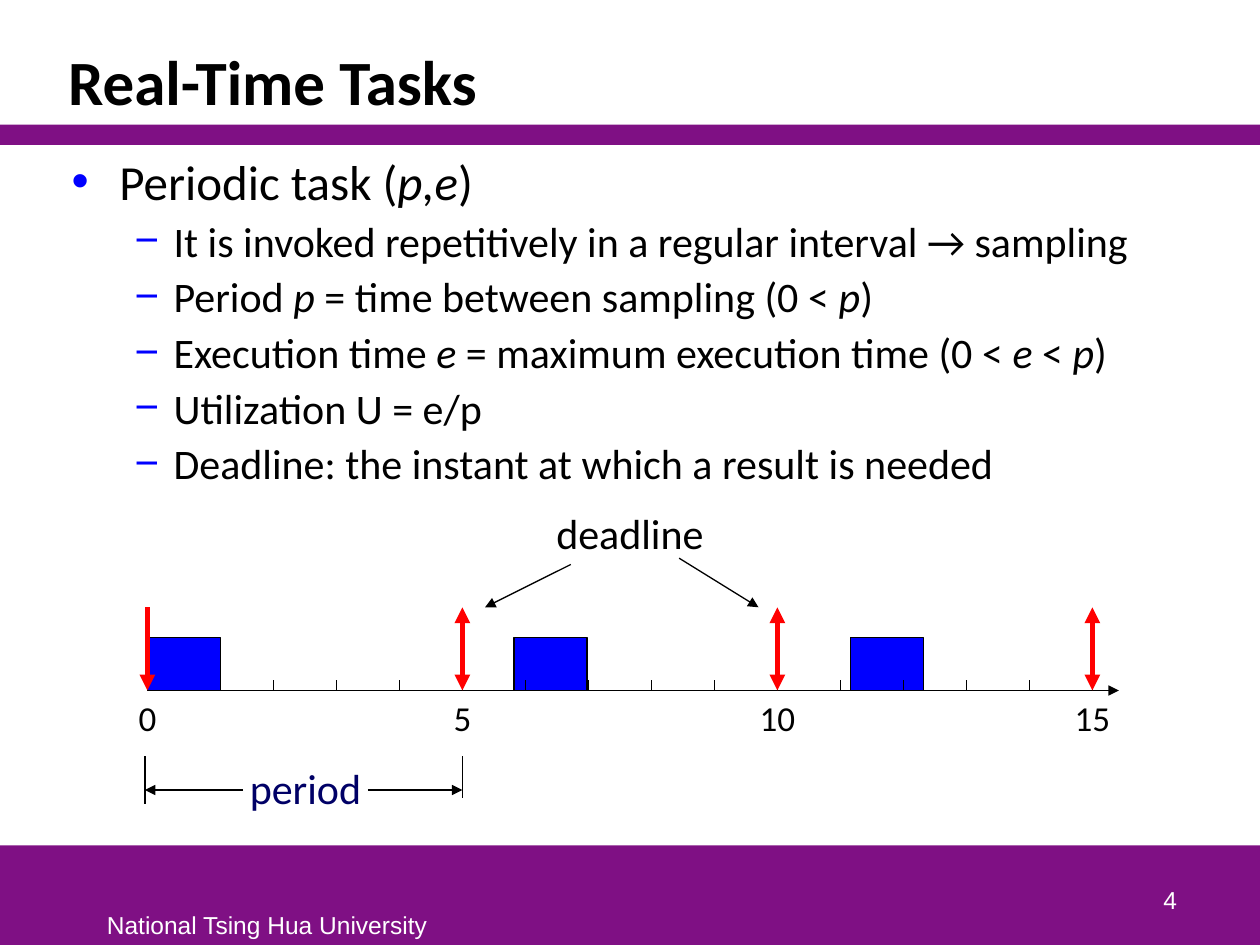
from pptx import Presentation, util as u
from pptx.dml.color import RGBColor
from pptx.enum import shapes, text
from pptx.oxml.ns import qn
from lxml import etree

# Content
TITLE = "Real-Time Tasks"
FOOTER = "National Tsing Hua University"
PAGE = "4"
# (level, runs); every second run is italic
BODY = [
    (0, ["Periodic task (", "p,e", ")"]),
    (1, ["It is invoked repetitively in a regular interval → sampling"]),
    (1, ["Period ", "p", " = time between sampling (0 < ", "p", ")"]),
    (1, ["Execution time ", "e", " = maximum execution time (0 < ", "e ", "< ", "p", ")"]),
    (1, ["Utilization U = e/p"]),
    (1, ["Deadline: the instant at which a result is needed"]),
]
LEVELS = [  # bullet, size, left margin, indent
    ("•", 28, 0.38, -0.38),
    ("−", 24, 0.81, -0.31),
]
COLORS = {"band": "7F1084", "white": "FFFFFF", "black": "000000",
          "blue": "0000FF", "red": "FF0000", "navy": "000066"}

# Timeline grid
X0, STEP, PERIOD, LAST = 1.17, 0.5, 5, 15
AXIS_Y, TICK, RELEASE_TOP = 5.48, 0.08, 4.82
JOB_W, JOB_H = 0.58, 0.42
LATER_JOBS = [4.08, 6.75]
DIM_TOP, DIM_Y = 6, 6.27

prs = Presentation()
prs.slide_width, prs.slide_height = u.Inches(10), u.Inches(7.5)
s = prs.slides.add_slide(prs.slide_layouts[5])


def rgb(name):
    return RGBColor.from_string(COLORS[name])


def add_run(p, words, size, color="black", font="Calibri", bold=False, italic=False):
    r = p.add_run()
    r.text = words
    f = r.font
    f.size, f.name, f.bold, f.italic = u.Pt(size), font, bold, italic
    f.color.rgb = rgb(color)


def box(x, y, w, h, wrap=True):
    tf = s.shapes.add_textbox(*map(u.Inches, (x, y, w, h))).text_frame
    tf.word_wrap = wrap
    return tf


def label(words, x, y, w, h, size, align=None, wrap=True, **style):
    tf = box(x, y, w, h, wrap)
    p = tf.paragraphs[0]
    p.alignment = align
    add_run(p, words, size, **style)
    return tf


def rect(x, y, w, h, fill, line=None):
    sp = s.shapes.add_shape(shapes.MSO_SHAPE.RECTANGLE, *map(u.Inches, (x, y, w, h)))
    sp.shadow.inherit = False
    sp.fill.solid()
    sp.fill.fore_color.rgb = rgb(fill)
    if line:
        sp.line.color.rgb = rgb(line)
        sp.line.width = u.Pt(1)
    else:
        sp.line.fill.background()


def line(x1, y1, x2, y2, color="black", width=0.75, arrows=()):
    c = s.shapes.add_connector(shapes.MSO_CONNECTOR.STRAIGHT,
                               *map(u.Inches, (x1, y1, x2, y2)))
    c.line.color.rgb = rgb(color)
    c.line.width = u.Pt(width)
    for end in arrows:
        etree.SubElement(c.line._get_or_add_ln(), qn("a:" + end), type="triangle")
    etree.SubElement(c._element.spPr, qn("a:effectLst"))


def bullet(p, char, left, indent):
    pPr = p._p.get_or_add_pPr()
    pPr.set("marL", str(u.Inches(left)))
    pPr.set("indent", str(u.Inches(indent)))
    clr = etree.SubElement(pPr, qn("a:buClr"))
    etree.SubElement(clr, qn("a:srgbClr"), val=COLORS["blue"])
    etree.SubElement(pPr, qn("a:buFont"), typeface="Arial")
    etree.SubElement(pPr, qn("a:buChar"), char=char)


def job(x):
    rect(x, AXIS_Y - JOB_H, JOB_W, JOB_H, "blue", "black")


def at(time):
    return X0 + time * STEP


# Bands, footer and page number
rect(0, 6.71, 10, 0.79, "band")
rect(0, 0.99, 10, 0.16, "band")
label(FOOTER, 0.75, 7.17, 2.76, 0.33, 14, wrap=False, color="white", font="Arial")
tf = label(PAGE, 7.36, 6.81, 2.08, 0.5, 14, text.PP_ALIGN.RIGHT,
           color="white", font="Arial")
tf.vertical_anchor = text.MSO_ANCHOR.BOTTOM

# Title
title = s.shapes.title
title.left, title.top, title.width, title.height = map(u.Inches, (0.44, 0.25, 8.97, 0.74))
tf = title.text_frame
tf.vertical_anchor = text.MSO_ANCHOR.BOTTOM
p = tf.paragraphs[0]
p.alignment, p.line_spacing = text.PP_ALIGN.LEFT, 0.85
add_run(p, TITLE, 36, bold=True)

# Bulleted text
tf = box(0.47, 1.15, 8.94, 5.51)
for i, (level, runs) in enumerate(BODY):
    p = tf.add_paragraph() if i else tf.paragraphs[0]
    char, size, left, indent = LEVELS[level]
    p.level = level
    if i:
        p.space_before = u.Pt(3)
    bullet(p, char, left, indent)
    for j, words in enumerate(runs):
        # the run "< " between two variables stays upright
        add_run(p, words, size, italic=j % 2 == 1)

# Timeline: jobs, axis and ticks
for x in LATER_JOBS:
    job(x)
line(X0, AXIS_Y, 8.71, AXIS_Y)
for time in range(LAST + 1):
    line(at(time), AXIS_Y - TICK, at(time), AXIS_Y)
job(X0)
line(8.62, AXIS_Y, 8.88, AXIS_Y, arrows=["tailEnd"])

# Releases and deadlines, with their times
for time in range(0, LAST + 1, PERIOD):
    ends = ["headEnd", "tailEnd"] if time else ["tailEnd"]
    line(at(time), RELEASE_TOP, at(time), AXIS_Y, "red", 3, ends)
    w = 0.35 if time < 10 else 0.5
    label(str(time), at(time) - w / 2, AXIS_Y, w, 0.44, 20,
          text.PP_ALIGN.CENTER, wrap=False)

# Period dimension
line(1.15, DIM_TOP, 1.15, 6.38)
line(at(PERIOD), DIM_TOP, at(PERIOD), 6.33)
label("period", 1.65, DIM_TOP, 1.55, 0.5, 24, text.PP_ALIGN.CENTER, color="navy")
line(2.92, DIM_Y, at(PERIOD), DIM_Y, arrows=["tailEnd"])
line(1.93, DIM_Y, 1.15, DIM_Y, arrows=["tailEnd"])

# Deadline callout
label("deadline", 4.21, 3.98, 1.58, 0.5, 24, text.PP_ALIGN.CENTER)
line(5.39, 4.43, 6.02, RELEASE_TOP, arrows=["tailEnd"])
line(4.53, 4.48, 3.85, RELEASE_TOP, arrows=["tailEnd"])

prs.save("out.pptx")
